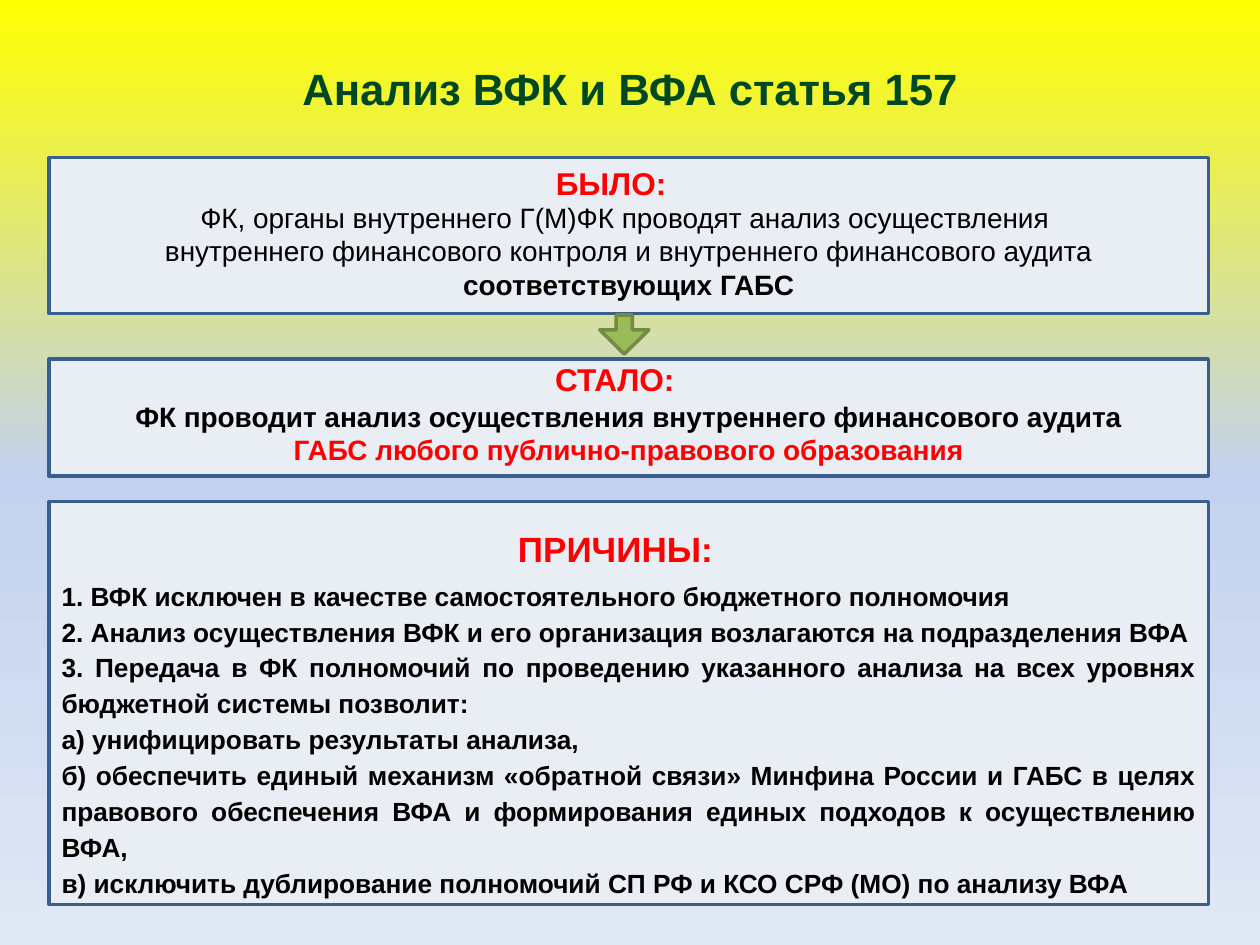
from copy import deepcopy

from pptx import Presentation
from pptx.dml.color import RGBColor
from pptx.enum.shapes import MSO_SHAPE
from pptx.enum.text import MSO_ANCHOR, PP_ALIGN
from pptx.util import Inches, Pt

RED, BLACK, GREEN = "FF0000", "000000", "004821"

REASONS = [
    "1. ВФК исключен в качестве самостоятельного бюджетного полномочия",
    "2. Анализ осуществления ВФК и его организация возлагаются на подразделения ВФА",
    "3. Передача в ФК полномочий по проведению указанного анализа на всех уровнях "
    "бюджетной системы позволит:",
    "а) унифицировать результаты анализа,",
    "б) обеспечить единый механизм «обратной связи» Минфина России и ГАБС в целях "
    "правового обеспечения ВФА и формирования единых подходов к осуществлению ВФА,",
    "в) исключить дублирование полномочий СП РФ и КСО СРФ (МО) по анализу ВФА",
]


def color(hex_value):
    return RGBColor.from_string(hex_value)


def format_runs(paragraph, size, hex_value=BLACK, bold=True, align=PP_ALIGN.CENTER):
    paragraph.alignment = align
    for run in paragraph.runs:
        run.font.name = "Arial"
        run.font.size = Pt(size)
        run.font.bold = bold
        run.font.color.rgb = color(hex_value)


def set_background(slide, hex_values):
    """Fill the background from top to bottom with three evenly spaced colours."""
    fill = slide.background.fill
    fill.gradient()
    fill.gradient_angle = 270
    stop_list = slide._element.xpath(".//a:gsLst")[0]
    stop_list.insert(1, deepcopy(stop_list[0]))
    for index, (stop, hex_value) in enumerate(zip(fill.gradient_stops, hex_values)):
        stop.position = index / 2
        stop.color.rgb = color(hex_value)


def add_title(slide, text):
    title = slide.shapes.title
    title.left, title.top = Inches(0.5), Inches(0.3)
    title.width, title.height = Inches(9), Inches(0.79)
    title.text_frame.text = text
    title.text_frame.vertical_anchor = MSO_ANCHOR.MIDDLE
    format_runs(title.text_frame.paragraphs[0], 25, GREEN)


def add_filled_shape(slide, kind, left, top, width, height, fill, line):
    shape = slide.shapes.add_shape(
        kind, Inches(left), Inches(top), Inches(width), Inches(height))
    shape.shadow.inherit = False
    shape.fill.solid()
    shape.fill.fore_color.rgb = color(fill)
    shape.line.color.rgb = color(line)
    shape.line.width = Pt(2)
    return shape


def add_panel(slide, top, height, lines, anchor=MSO_ANCHOR.MIDDLE, heading_space=0.0):
    """Add a full-width panel and return its paragraphs."""
    panel = add_filled_shape(
        slide, MSO_SHAPE.RECTANGLE, 0.39, top, 9.2, height, "E9EDF4", "3A5F8C")
    frame = panel.text_frame
    frame.word_wrap = True
    frame.vertical_anchor = anchor
    frame.margin_top = Inches(0.05 + heading_space)
    frame.text = "\n".join(lines)
    return frame.paragraphs


def add_heading(slide, text, left, top, width, height, size):
    box = slide.shapes.add_textbox(
        Inches(left), Inches(top), Inches(width), Inches(height))
    box.text_frame.word_wrap = True
    box.text_frame.text = text
    format_runs(box.text_frame.paragraphs[0], size, RED)


def add_down_arrow(slide):
    arrow = add_filled_shape(
        slide, MSO_SHAPE.DOWN_ARROW, 4.76, 2.5, 0.39, 0.31, "9BBB59", "738A42")
    arrow.adjustments[0] = 0.33
    arrow.adjustments[1] = 0.62


def main():
    presentation = Presentation()
    presentation.slide_width = Inches(10)
    presentation.slide_height = Inches(7.5)
    slide = presentation.slides.add_slide(presentation.slide_layouts[5])
    set_background(slide, ["FFFF00", "C2D1ED", "E1E8F5"])
    add_title(slide, "Анализ ВФК и ВФА статья 157")

    before = add_panel(slide, 1.25, 1.24, [
        "ФК, органы внутреннего Г(М)ФК проводят анализ осуществления \v"
        "внутреннего финансового контроля и внутреннего финансового аудита "],
        heading_space=0.24)[0]
    before.add_run().text = "соответствующих ГАБС"
    format_runs(before, 16, bold=False)
    before.runs[-1].font.bold = True

    analysis, budget_managers = add_panel(slide, 2.85, 0.93, [
        "ФК проводит анализ осуществления внутреннего финансового аудита",
        "ГАБС любого публично-правового образования"], heading_space=0.24)
    format_runs(analysis, 16)
    format_runs(budget_managers, 16, RED)

    for reason in add_panel(slide, 3.98, 3.2, REASONS, MSO_ANCHOR.BOTTOM):
        format_runs(reason, 15, align=PP_ALIGN.JUSTIFY)
        reason.line_spacing = 1.14

    add_heading(slide, "БЫЛО:", 2.27, 1.25, 5.16, 0.4, 18)
    add_heading(slide, "СТАЛО:", 4.3, 2.81, 1.16, 0.4, 18)
    add_heading(slide, "ПРИЧИНЫ:", 3.36, 4.14, 3.05, 0.44, 20)
    add_down_arrow(slide)
    presentation.save("out.pptx")


if __name__ == "__main__":
    main()
